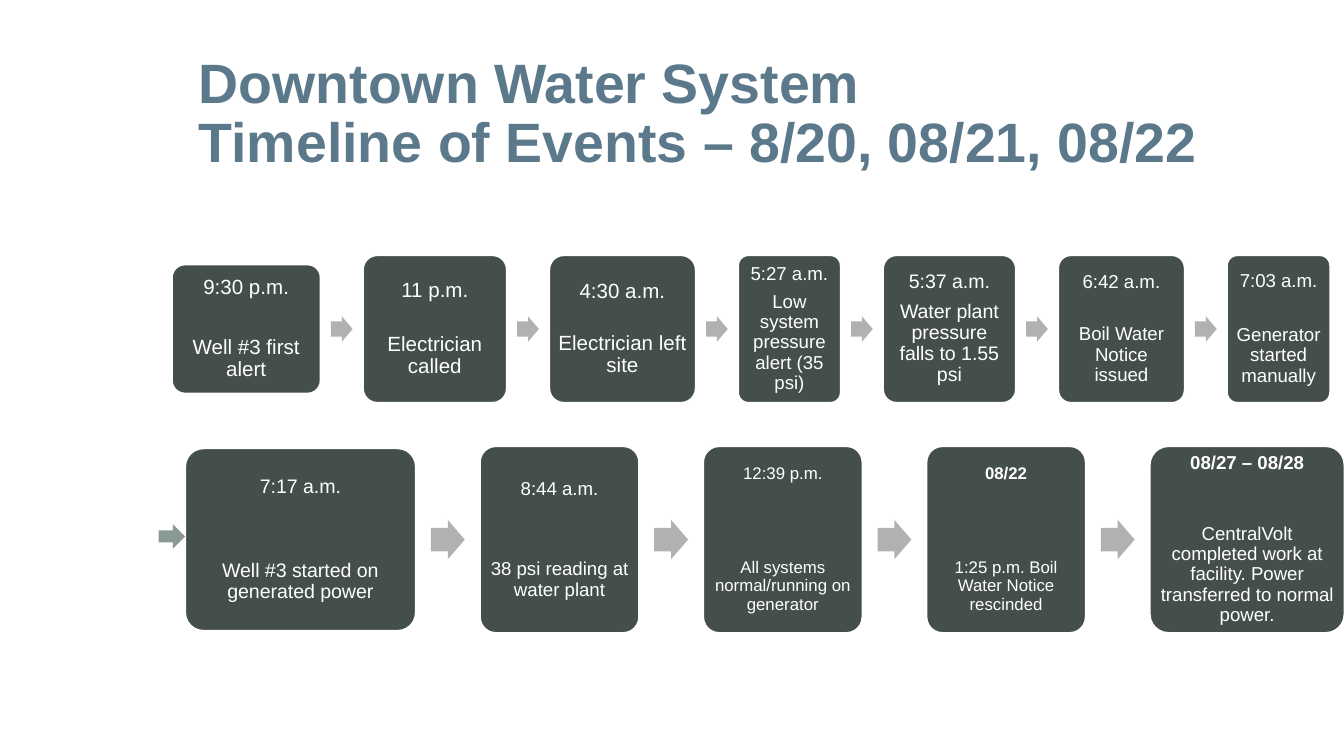
from pptx import Presentation
from pptx.dml.color import RGBColor
from pptx.enum import shapes, text
from pptx.util import Cm, Pt

FONT = "Arial"
HUES = {"title": "5C798C", "card": "444E4C", "arrow": "B0B2B2",
        "lead": "8A9996", "white": "FFFFFF"}

# Each event: width, height, font size, space under the time, bold time, time, event
NIGHT = [
    (2.81, 2.44, 11, 20, False, "9:30 p.m.", "Well #3 first alert"),
    (2.72, 2.79, 11, 17, False, "11 p.m.", "Electrician called"),
    (2.77, 2.79, 11, 16, False, "4:30 a.m.", "Electrician left site"),
    (1.94, 2.79, 10, 4, False, "5:27 a.m.", "Low system pressure alert (35 psi)"),
    (2.51, 2.79, 10.5, 4.5, False, "5:37 a.m.",
     "Water plant pressure falls to 1.55 psi"),
    (2.39, 2.79, 10, 17, False, "6:42 a.m.", "Boil Water Notice issued"),
    (1.95, 2.79, 10, 18, False, "7:03 a.m.", "Generator started manually"),
]
AFTER = [
    (4.36, 3.45, 10.5, 34, False, "7:17 a.m.", "Well #3 started on generated power"),
    (3.01, 3.53, 10, 32.5, False, "8:44 a.m.", "38 psi reading at water plant"),
    (3.01, 3.53, 9, 40.5, False, "12:39 p.m.",
     "All systems normal/running on generator"),
    (3.01, 3.53, 9, 40.5, True, "08/22", "1:25 p.m. Boil Water Notice rescinded"),
    (3.68, 3.53, 10, 27, True, "08/27 – 08/28",
     "CentralVolt completed work at facility. Power transferred to normal power."),
]


def hue(name):
    """Return the named colour."""
    return RGBColor.from_string(HUES[name])


def style(para, size, color, bold=False):
    """Set the font and line spacing of a paragraph."""
    para.line_spacing = 0.9
    para.font.name = FONT
    para.font.size = Pt(size)
    para.font.bold = bold
    para.font.color.rgb = hue(color)


def add_title(slide, words):
    """Place and format the title."""
    title = slide.shapes.title
    title.left, title.top = Cm(3.5), Cm(0.79)
    title.width, title.height = Cm(21.9), Cm(2.77)
    frame = title.text_frame
    frame.text = words
    frame.auto_size = text.MSO_AUTO_SIZE.NONE
    frame.vertical_anchor = text.MSO_ANCHOR.MIDDLE
    para = frame.paragraphs[0]
    para.alignment = text.PP_ALIGN.LEFT
    style(para, 29.7, "title", True)


def add_shape(slide, kind, left, mid, width, height, color):
    """Add a flat shape centred on a horizontal line."""
    shape = slide.shapes.add_shape(kind, Cm(left), Cm(mid - height / 2),
                                   Cm(width), Cm(height))
    shape.shadow.inherit = False
    shape.fill.solid()
    shape.fill.fore_color.rgb = hue(color)
    shape.line.fill.background()
    return shape


def add_arrow(slide, left, mid, width, height, color, shaft=0.6):
    """Add a right arrow."""
    arrow = add_shape(slide, shapes.MSO_SHAPE.RIGHT_ARROW, left, mid,
                      width, height, color)
    arrow.adjustments[0] = shaft


def add_card(slide, left, mid, event):
    """Add a rounded card with a time and what happened."""
    width, height, size, space, bold, time, news = event
    card = add_shape(slide, shapes.MSO_SHAPE.ROUNDED_RECTANGLE, left, mid,
                     width, height, "card")
    card.adjustments[0] = 0.1
    card.line.color.rgb = hue("white")
    card.line.width = Pt(1)
    frame = card.text_frame
    frame.word_wrap = True
    frame.vertical_anchor = text.MSO_ANCHOR.MIDDLE
    frame.margin_left = frame.margin_right = Cm(0.09)
    frame.margin_top = frame.margin_bottom = Cm(0.09)
    frame.text = f"{time}\n{news}"
    head, body = frame.paragraphs
    for para, heavy in ((head, bold), (body, False)):
        para.alignment = text.PP_ALIGN.CENTER
        style(para, size, "white", heavy)
    head.space_after = Pt(space)


def add_row(slide, events, left, mid, gap, arrow):
    """Lay out cards from left to right with an arrow in each gap."""
    width, height = arrow
    for num, event in enumerate(events):
        if num:
            add_arrow(slide, left + (gap - width) / 2, mid, width, height, "arrow")
            left += gap
        add_card(slide, left, mid, event)
        left += event[0]


def main():
    """Build the timeline slide."""
    deck = Presentation()
    deck.slide_width, deck.slide_height = Cm(25.4), Cm(14.29)
    slide = deck.slides.add_slide(deck.slide_layouts[5])
    add_title(slide, "Downtown Water System\vTimeline of Events – 8/20, 08/21, 08/22")
    add_row(slide, NIGHT, 3.25, 6.22, 0.8, (0.41, 0.48))
    add_row(slide, AFTER, 3.5, 10.2, 1.21, (0.64, 0.74))
    add_arrow(slide, 3, 10.14, 0.5, 0.46, "lead", 0.5)
    deck.save("out.pptx")


if __name__ == "__main__":
    main()
